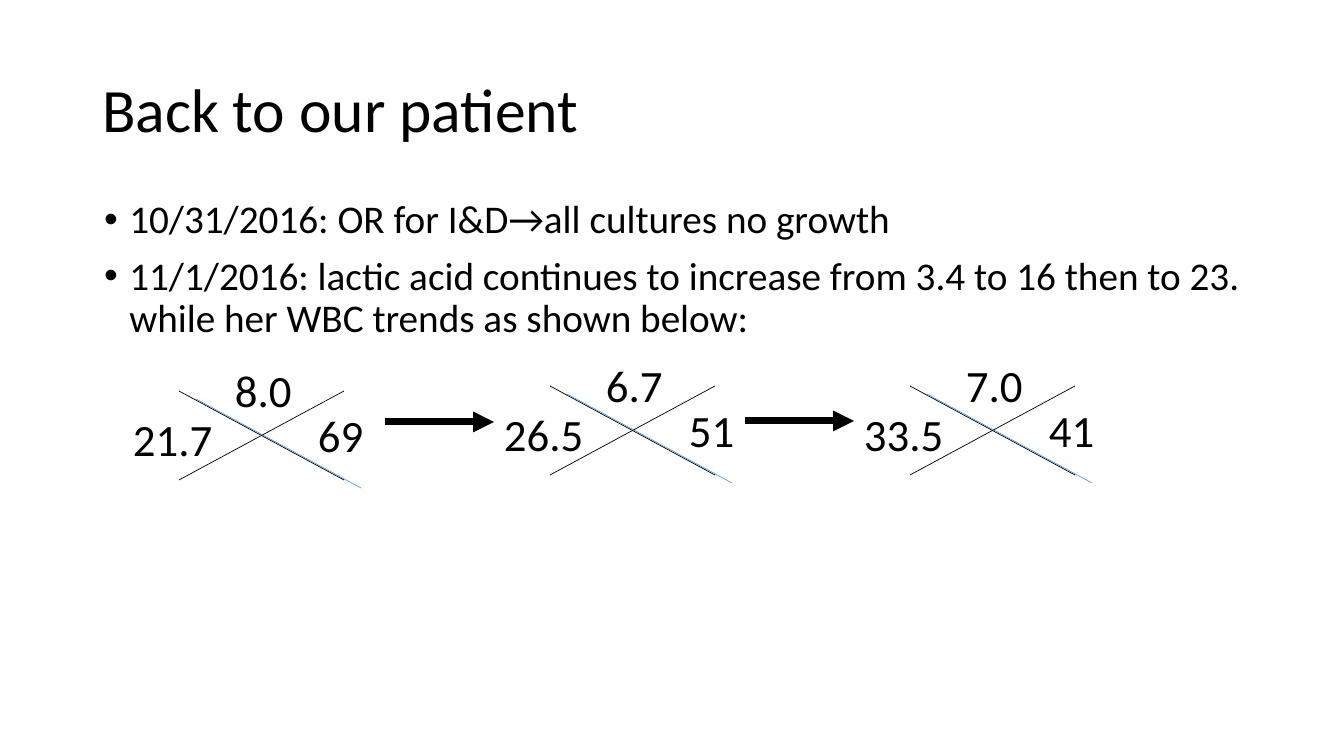
from lxml import etree
from pptx import Presentation
from pptx import util as u
from pptx.dml.color import RGBColor
from pptx.enum import shapes, text
from pptx.oxml.ns import qn

COLORS = {"ink": "000000", "blue": "5B9BD5"}
BOX_W, BOX_H = 119, 65
COUNTS = [
    (123, 358, "21.7", "8.0", "69"),
    (494, 353, "26.5", "6.7", "51"),
    (854, 353, "33.5", "7.0", "41"),
]
ARROWS = [(385, 422), (745, 421)]
ARROW_LENGTH = 109


def px(n):
    return u.Emu(round(n * 914400 / 100.8))


class Deck:
    font = "Calibri"

    def __init__(self):
        self.prs = Presentation()
        self.prs.slide_width, self.prs.slide_height = px(1344), px(756)
        self.s = self.prs.slides.add_slide(self.prs.slide_layouts[1])

    def place(self, sp, x, y, w, h):
        sp.left, sp.top, sp.width, sp.height = px(x), px(y), px(w), px(h)

    def style(self, p, size):
        for r in p.runs:
            r.font.name = self.font
            r.font.size = u.Pt(size)
            r.font.color.rgb = RGBColor.from_string(COLORS["ink"])

    def title(self, x, y, w, h, words):
        sp = self.s.shapes.title
        self.place(sp, x, y, w, h)
        tf = sp.text_frame
        tf.text = words
        tf.auto_size = text.MSO_AUTO_SIZE.NONE
        tf.vertical_anchor = text.MSO_ANCHOR.MIDDLE
        p = tf.paragraphs[0]
        p.alignment = text.PP_ALIGN.LEFT
        p.line_spacing = 0.9
        self.style(p, 44)

    def bullets(self, x, y, w, h, items):
        sp = self.s.placeholders[1]
        self.place(sp, x, y, w, h)
        tf = sp.text_frame
        tf.text = "\n".join(items)
        tf.auto_size = text.MSO_AUTO_SIZE.NONE
        for i, p in enumerate(tf.paragraphs):
            pPr = p._p.get_or_add_pPr()
            pPr.set("marL", "228600")
            pPr.set("indent", "-228600")
            etree.SubElement(pPr, qn("a:buFont")).set("typeface", "Arial")
            etree.SubElement(pPr, qn("a:buChar")).set("char", "•")
            p.line_spacing = 0.9
            p.space_before = u.Pt(10 if i else 0)
            self.style(p, 28)

    def label(self, x, y, words):
        sp = self.s.shapes.add_textbox(px(x), px(y), px(BOX_W), px(BOX_H))
        tf = sp.text_frame
        tf.word_wrap = True
        tf.auto_size = text.MSO_AUTO_SIZE.SHAPE_TO_FIT_TEXT
        tf.text = words
        self.style(tf.paragraphs[0], 32)

    def line(self, x1, y1, x2, y2, color="ink", width=0.5, arrow=False):
        c = self.s.shapes.add_connector(
            shapes.MSO_CONNECTOR.STRAIGHT, px(x1), px(y1), px(x2), px(y2))
        c.line.color.rgb = RGBColor.from_string(COLORS[color])
        c.line.width = u.Pt(width)
        if arrow:
            ln = c.line._get_or_add_ln()
            etree.SubElement(ln, qn("a:tailEnd")).set("type", "triangle")
        etree.SubElement(c._element.spPr, qn("a:effectLst"))

    def blood_count(self, x, y, wbc, hemoglobin, platelets):
        left, right, top, bottom = x + 56, x + 221, y + 33, y + 122
        self.line(left, top, right, bottom)
        self.line(left + 17, top + 8, right + 17, bottom + 8, "blue")
        self.line(right, top, left, bottom)
        self.label(x, y + 49, wbc)
        self.label(x + 102, y, hemoglobin)
        self.label(x + 185, y + 45, platelets)


def main():
    deck = Deck()
    deck.title(92, 40, 1159, 146, "Back to our patient")
    deck.bullets(94, 195, 1159, 480, [
        "10/31/2016: OR for I&D→all cultures no growth",
        "11/1/2016: lactic acid continues to increase from 3.4 to 16 "
        "then to 23. while her WBC trends as shown below:",
    ])
    for count in COUNTS:
        deck.blood_count(*count)
    for x, y in ARROWS:
        deck.line(x, y, x + ARROW_LENGTH, y, width=5, arrow=True)
    deck.prs.save("out.pptx")


if __name__ == "__main__":
    main()
